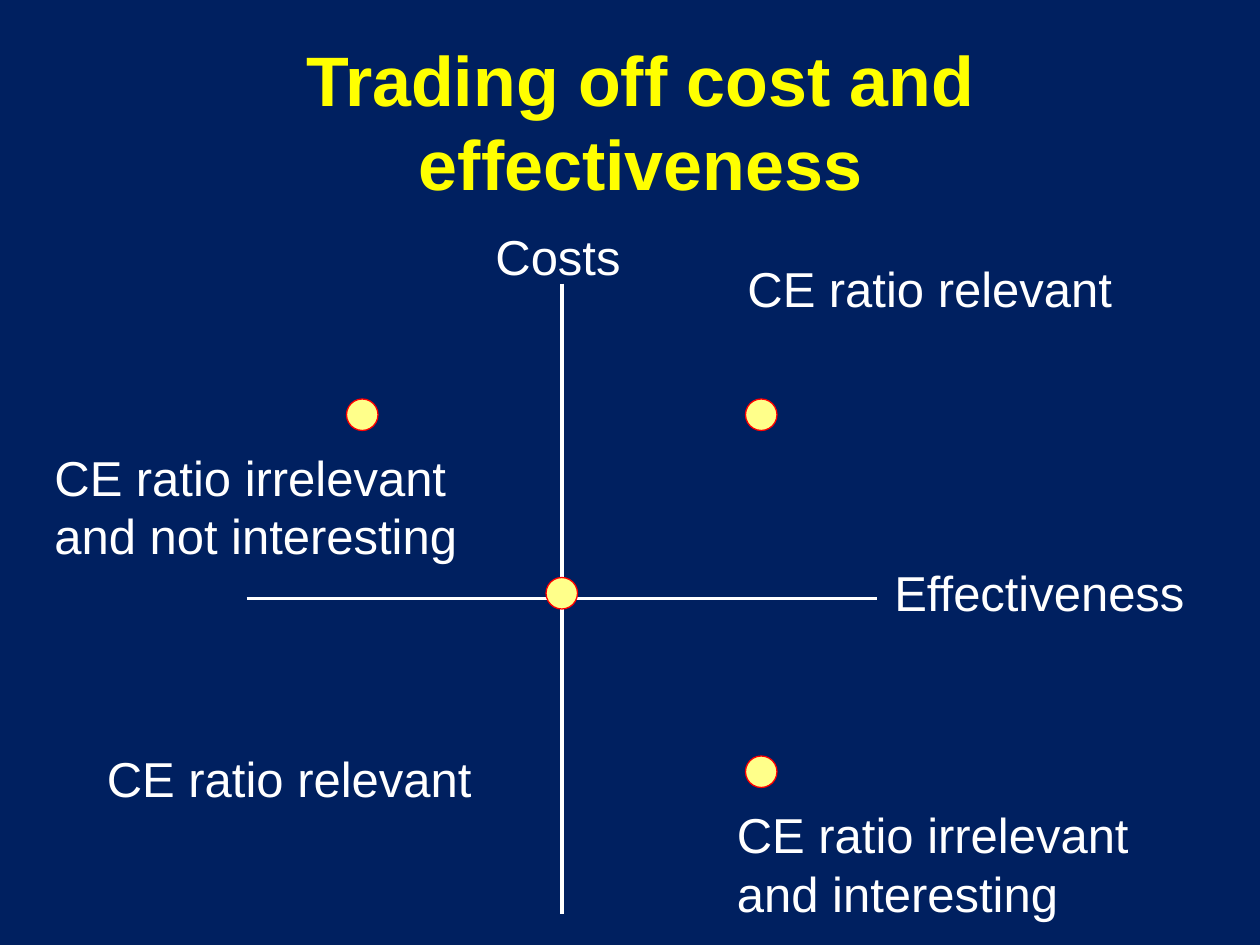
"""Build the slide on trading off cost and effectiveness."""
from lxml.etree import SubElement
from pptx import Presentation
from pptx.dml.color import RGBColor
from pptx.enum.shapes import MSO_CONNECTOR, MSO_SHAPE
from pptx.enum.text import MSO_ANCHOR, PP_ALIGN
from pptx.oxml.ns import qn
from pptx.util import Pt

NAVY = RGBColor(0x00, 0x20, 0x60)
YELLOW = RGBColor(0xFF, 0xFF, 0x00)
PALE_YELLOW = RGBColor(0xFF, 0xFF, 0x8A)
RED = RGBColor(0xFF, 0x00, 0x00)
WHITE = RGBColor(0xFF, 0xFF, 0xFF)


def add_text(s, text, x, y, w, h, size=28, color=WHITE, bold=False):
    tf = s.shapes.add_textbox(Pt(x), Pt(y), Pt(w), Pt(h)).text_frame
    tf.word_wrap = True
    p = tf.paragraphs[0]
    p.text = text
    p.font.name = "Arial"
    p.font.size = Pt(size)
    p.font.bold = bold
    p.font.color.rgb = color
    return tf


prs = Presentation()
prs.slide_width, prs.slide_height = Pt(720), Pt(540)
s = prs.slides.add_slide(prs.slide_layouts[6])
s.background.fill.solid()
s.background.fill.fore_color.rgb = NAVY

title = add_text(s, "Trading off cost and effectiveness", 60, 24, 612, 90, 40, YELLOW, True)
title.vertical_anchor = MSO_ANCHOR.MIDDLE
title.paragraphs[0].alignment = PP_ALIGN.CENTER

cx, cy, arm = 321, 342, 180
for dx, dy in [(0, arm), (arm, 0)]:
    axis = s.shapes.add_connector(
        MSO_CONNECTOR.STRAIGHT, Pt(cx - dx), Pt(cy - dy), Pt(cx + dx), Pt(cy + dy))
    axis.line.color.rgb = WHITE
    axis.line.width = Pt(2.25)
    SubElement(axis._element.spPr, qn("a:effectLst"))

for x, y in [(312, 330), (198, 228), (426, 432), (426, 228)]:
    sp = s.shapes.add_shape(MSO_SHAPE.OVAL, Pt(x), Pt(y), Pt(18), Pt(18))
    sp.shadow.inherit = False
    sp.fill.solid()
    sp.fill.fore_color.rgb = PALE_YELLOW
    sp.line.color.rgb = RED
    sp.line.width = Pt(0.75)

labels = [
    ("Costs", 276, 126, 90, 41),
    ("Effectiveness", 504, 318, 186, 41),
    ("CE ratio irrelevant and interesting", 414, 456, 276, 75),
    ("CE ratio irrelevant and not interesting", 24, 252, 276, 75),
    ("CE ratio relevant", 420, 144, 276, 41),
    ("CE ratio relevant", 54, 424, 276, 41),
]
for label in labels:
    add_text(s, *label)

prs.save("out.pptx")
